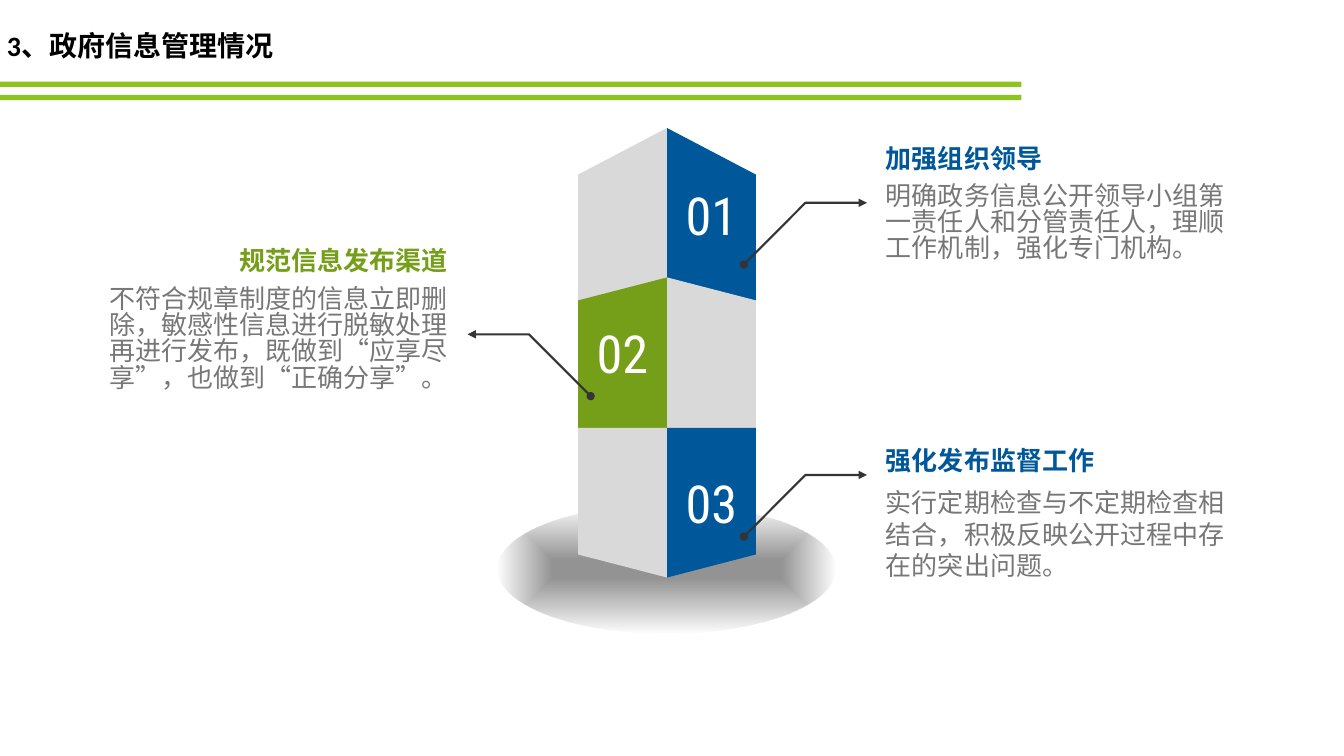
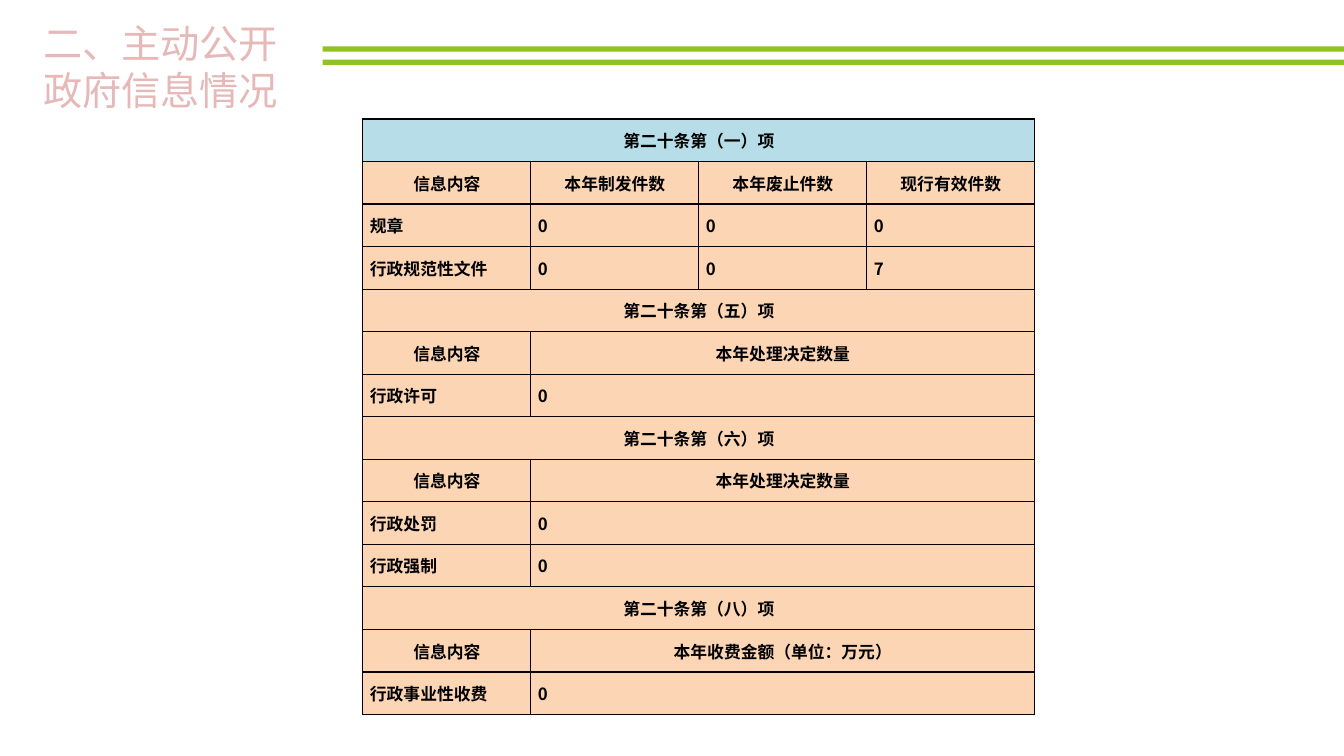
from dataclasses import dataclass

from lxml.etree import SubElement
from pptx import Presentation
from pptx.dml.color import RGBColor
from pptx.enum.shapes import MSO_SHAPE
from pptx.enum.text import MSO_ANCHOR, PP_ALIGN
from pptx.oxml import parse_xml
from pptx.oxml.ns import nsdecls, qn
from pptx.util import Emu, Inches, Pt

SLIDE_WIDTH, SLIDE_HEIGHT = Inches(13.333), Inches(7.5)
COLORS = {
    "band": "8FC31F", "blue": "00589A", "green": "769F19", "gray": "D9D9D9",
    "body": "777777", "leader": "343434", "shade": "333333", "white": "FFFFFF",
    "black": "000000", "pink": "E6B9B8", "outline": "C0504D",
    "table_head": "B7DEE8", "table_body": "FCD5B5", "border": "080000",
}
CJK_FONT, TITLE_FONT, NUMBER_FONT = "Noto Sans CJK SC", "Calibri", "Roboto Condensed"

# Lengths are percent of the slide's width (columns) and height (rows).
BAND_WIDTH, BAND_HEIGHT, BAND_STEP = 76, 0.7, 1.75
SPINE, FACE_WIDTH = 49.63, 6.62
LEADER_STEP = (4.58, 8.17)
NOTE_SIZE = (27.38, 24.13)
TABLE_COLUMNS = 4


@dataclass(frozen=True)
class Box:
    left: float
    top: float
    width: float
    height: float

    def emu(self) -> tuple[Emu, Emu, Emu, Emu]:
        return (col(self.left), row(self.top), col(self.width), row(self.height))


@dataclass(frozen=True)
class Level:
    """One storey of the tower; side is 1 when the numbered face is on the right."""
    number: str
    color: str
    side: int
    spine: tuple[float, float]
    edge: tuple[float, float]


@dataclass(frozen=True)
class Note:
    heading: str
    body: str
    color: str
    left: float
    top: float
    side: int
    leader_start: tuple[float, float]
    body_spacing: float = 0.84
    body_after: float = 8


@dataclass(frozen=True)
class TableRow:
    texts: tuple[str, ...]
    centered: bool = False
    color: str = "table_body"


LEVELS = (
    Level("01", "blue", 1, (16.93, 36.75), (23.1, 39.8)),
    Level("02", "green", -1, (36.7, 56.6), (39.75, 56.65)),
    Level("03", "blue", 1, (56.6, 76.4), (56.6, 73.35)),
)
NOTES = (
    Note("加强组织领导", "明确政务信息公开领导小组第一责任人和分管责任人，理顺工作机制，强化专门机构。",
         "blue", 65.18, 18.8, 1, (55.35, 35)),
    Note("强化发布监督工作", "实行定期检查与不定期检查相结合，积极反映公开过程中存在的突出问题。",
         "blue", 65.18, 58.8, 1, (55.35, 71), 1, 0),
    Note("规范信息发布渠道",
         "不符合规章制度的信息立即删除，敏感性信息进行脱敏处理再进行发布，既做到“应享尽享”，也做到“正确分享”。",
         "green", 6.67, 32.4, -1, (43.95, 52.4)),
)
DECISIONS = TableRow(("信息内容", "本年处理决定数量"), True)
TABLE_ROWS = (
    TableRow(("第二十条第（一）项",), True, "table_head"),
    TableRow(("信息内容", "本年制发件数", "本年废止件数", "现行有效件数"), True),
    TableRow(("规章", "0", "0", "0")),
    TableRow(("行政规范性文件", "0", "0", "7")),
    TableRow(("第二十条第（五）项",), True),
    DECISIONS,
    TableRow(("行政许可", "0")),
    TableRow(("第二十条第（六）项",), True),
    DECISIONS,
    TableRow(("行政处罚", "0")),
    TableRow(("行政强制", "0")),
    TableRow(("第二十条第（八）项",), True),
    TableRow(("信息内容", "本年收费金额（单位：万元）"), True),
    TableRow(("行政事业性收费", "0")),
)


def col(share: float) -> Emu:
    return Emu(round(SLIDE_WIDTH * share / 100))


def row(share: float) -> Emu:
    return Emu(round(SLIDE_HEIGHT * share / 100))


def rgb(name: str) -> RGBColor:
    return RGBColor.from_string(COLORS[name])


def write(paragraph, text: str, font: str, size: float, color: str,
          bold: bool = False, align=PP_ALIGN.LEFT) -> None:
    paragraph.text = text
    paragraph.alignment = align
    style = paragraph.font
    style.size, style.bold, style.name = Pt(size), bold, font
    style.color.rgb = rgb(color)
    latin = paragraph._p.pPr.find(".//" + qn("a:latin"))
    latin.addnext(parse_xml(f'<a:ea {nsdecls("a")} typeface="{font}"/>'))


def fill_plain(shape, color: str) -> None:
    shape.shadow.inherit = False
    shape.fill.solid()
    shape.fill.fore_color.rgb = rgb(color)
    shape.line.fill.background()


def outline(slide, points: list[tuple[float, float]], close: bool):
    corners = [(col(x), row(y)) for x, y in points]
    builder = slide.shapes.build_freeform(*corners[0], scale=1.0)
    builder.add_line_segments(corners[1:], close=close)
    return builder.convert_to_shape()


def add_bands(slide, left: float, top: float) -> None:
    for index in range(2):
        place = Box(left, top + index * BAND_STEP, BAND_WIDTH, BAND_HEIGHT)
        fill_plain(slide.shapes.add_shape(MSO_SHAPE.RECTANGLE, *place.emu()), "band")


def add_title(slide, text: str, place: Box, size: float, color: str, bold: bool = False):
    frame = slide.shapes.add_textbox(*place.emu()).text_frame
    frame.word_wrap = True
    write(frame.paragraphs[0], text, TITLE_FONT, size, color, bold)
    return frame.paragraphs[0]


def outline_letters(paragraph, color: str, points: float) -> None:
    paragraph._p.pPr.find(qn("a:defRPr")).insert(0, parse_xml(
        f'<a:ln {nsdecls("a")} w="{Pt(points)}"><a:solidFill>'
        f'<a:srgbClr val="{COLORS[color]}"/></a:solidFill></a:ln>'))


def add_ground_shade(slide) -> None:
    """Ellipse under the tower that fades out from its centre."""
    shade = slide.shapes.add_shape(MSO_SHAPE.OVAL, *Box(37.05, 66.8, 25.13, 16.93).emu())
    fill_plain(shade, "shade")
    stops = "".join(
        f'<a:gs pos="{pos}000"><a:srgbClr val="{COLORS["shade"]}">'
        f'<a:alpha val="{alpha}000"/></a:srgbClr></a:gs>'
        for pos, alpha in ((15, 52), (100, 0)))
    properties = shade._element.spPr
    properties.replace(properties.find(qn("a:solidFill")), parse_xml(
        f'<a:gradFill {nsdecls("a")}><a:gsLst>{stops}</a:gsLst><a:path path="shape">'
        '<a:fillToRect l="50000" t="50000" r="50000" b="50000"/></a:path></a:gradFill>'))


def add_level(slide, level: Level) -> None:
    for side in (1, -1):
        edge = SPINE + side * FACE_WIDTH
        face = outline(slide, [(SPINE, level.spine[0]), (edge, level.edge[0]),
                               (edge, level.edge[1]), (SPINE, level.spine[1])], True)
        numbered = side == level.side
        fill_plain(face, level.color if numbered else "gray")
        if numbered:
            face.text_frame.vertical_anchor = MSO_ANCHOR.MIDDLE
            write(face.text_frame.paragraphs[0], level.number, NUMBER_FONT, 37.4,
                  "white", align=PP_ALIGN.CENTER)


def add_note(slide, note: Note) -> None:
    frame = slide.shapes.add_textbox(*Box(note.left, note.top, *NOTE_SIZE).emu()).text_frame
    frame.word_wrap = True
    align = PP_ALIGN.LEFT if note.side > 0 else PP_ALIGN.RIGHT
    heading, body = frame.paragraphs[0], frame.add_paragraph()
    write(heading, note.heading, CJK_FONT, 18.6, note.color, True, align)
    write(body, note.body, CJK_FONT, 18.6, "body", align=align)
    heading.line_spacing, heading.space_after = 0.84, Pt(8)
    body.line_spacing, body.space_after = note.body_spacing, Pt(note.body_after)


def add_leader(slide, note: Note) -> None:
    x, y = note.leader_start
    step, rise = note.side * LEADER_STEP[0], LEADER_STEP[1]
    leader = outline(slide, [(x, y), (x + step, y - rise), (x + 2 * step, y - rise)], False)
    leader.shadow.inherit = False
    leader.fill.background()
    leader.line.color.rgb = rgb("leader")
    leader.line.width = Pt(1.5)
    stroke = leader._element.spPr.find(qn("a:ln"))
    for end, kind in (("a:headEnd", "oval"), ("a:tailEnd", "triangle")):
        SubElement(stroke, qn(end), type=kind)


def add_borders(cell) -> None:
    properties = cell._tc.get_or_add_tcPr()
    for index, edge in enumerate(("lnL", "lnR", "lnT", "lnB")):
        properties.insert(index, parse_xml(
            f'<a:{edge} {nsdecls("a")} w="{Pt(1)}"><a:solidFill>'
            f'<a:srgbClr val="{COLORS["border"]}"/></a:solidFill></a:{edge}>'))


def add_disclosure_table(slide, place: Box) -> None:
    """The last text of a short row spans the columns that are left."""
    table = slide.shapes.add_table(len(TABLE_ROWS), TABLE_COLUMNS, *place.emu()).table
    for column in table.columns:
        column.width = col(place.width / TABLE_COLUMNS)
    for index, entry in enumerate(TABLE_ROWS):
        table.rows[index].height = row(place.height / len(TABLE_ROWS))
        for position in range(TABLE_COLUMNS):
            cell = table.cell(index, position)
            cell.fill.solid()
            cell.fill.fore_color.rgb = rgb(entry.color)
            add_borders(cell)
        last = len(entry.texts) - 1
        if last < TABLE_COLUMNS - 1:
            table.cell(index, last).merge(table.cell(index, TABLE_COLUMNS - 1))
        for position, text in enumerate(entry.texts):
            cell = table.cell(index, position)
            cell.vertical_anchor = MSO_ANCHOR.MIDDLE
            cell.margin_left = cell.margin_right = Inches(0.07)
            cell.margin_top = cell.margin_bottom = 0
            write(cell.text_frame.paragraphs[0], text, CJK_FONT, 12, "black", True,
                  PP_ALIGN.CENTER if entry.centered else PP_ALIGN.LEFT)


def build_management(slide) -> None:
    add_bands(slide, 0, 10.8)
    add_ground_shade(slide)
    for level in LEVELS:
        add_level(slide, level)
    for note in NOTES:
        add_note(slide, note)
        add_leader(slide, note)
    add_title(slide, "3、政府信息管理情况", Box(-0.23, 3.07, 22.28, 5.87), 20, "black", True)


def build_disclosure(slide) -> None:
    add_bands(slide, 100 - BAND_WIDTH, 6.13)
    title = add_title(slide, "二、主动公开政府信息情况",
                      Box(2.48, 1.87, 21.68, 13.87), 28, "pink")
    outline_letters(title, "outline", 1.75)
    add_disclosure_table(slide, Box(27, 15.73, 50, 78.8))


def main() -> None:
    deck = Presentation()
    deck.slide_width, deck.slide_height = SLIDE_WIDTH, SLIDE_HEIGHT
    for build in (build_management, build_disclosure):
        build(deck.slides.add_slide(deck.slide_layouts[6]))
    deck.save("out.pptx")


if __name__ == "__main__":
    main()
